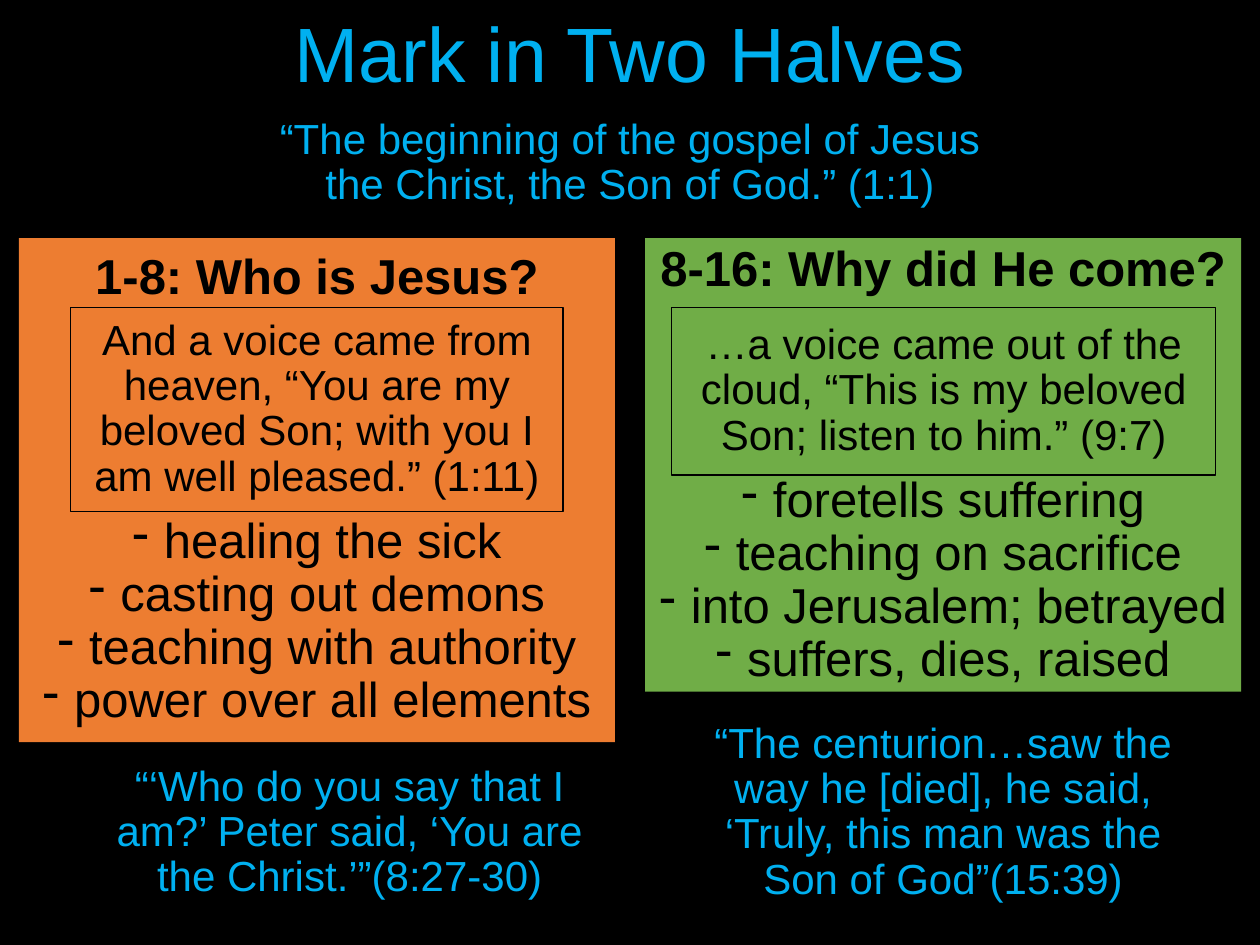
from lxml import etree
from pptx import Presentation
from pptx.dml.color import RGBColor
from pptx.enum.shapes import MSO_SHAPE
from pptx.enum.text import MSO_ANCHOR as ANCHOR, PP_ALIGN
from pptx.oxml.ns import qn
from pptx.util import Inches, Pt

BLACK = RGBColor(0x00, 0x00, 0x00)
BLUE = RGBColor(0x00, 0xB0, 0xF0)
ORANGE = RGBColor(0xED, 0x7D, 0x31)
GREEN = RGBColor(0x70, 0xAD, 0x47)

# Places are left, top, width, height in inches
TITLE = ("Mark in Two Halves", (0.69, 0.07, 8.62, 0.77))
OPENING = ("“The beginning of the gospel of Jesus the Christ, the Son of God.” (1:1)",
           (2.01, 0.9, 5.98, 0.79))
HALVES = [
    {
        "heading": "1-8: Who is Jesus?",
        "points": ["healing the sick", "casting out demons",
                   "teaching with authority", "power over all elements"],
        "panel": (0.15, 1.89, 4.73, 4), "fill": ORANGE,
        "anchor": ANCHOR.MIDDLE, "gap": 121,
        "voice": ("And a voice came from heaven, “You are my beloved Son; "
                  "with you I am well pleased.” (1:11)", (0.56, 2.44, 3.91, 1.62)),
        "answer": ("“‘Who do you say that I am?’ Peter said, ‘You are the Christ.’”(8:27-30)",
                   (0.69, 6.02, 4.17, 1.18)),
    },
    {
        "heading": "8-16: Why did He come?",
        "points": ["foretells suffering", "teaching on sacrifice",
                   "into Jerusalem; betrayed", "suffers, dies, raised"],
        "panel": (5.12, 1.89, 4.73, 3.6), "fill": GREEN,
        "anchor": ANCHOR.TOP, "gap": 101.5,
        "voice": ("…a voice came out of the cloud, “This is my beloved Son; "
                  "listen to him.” (9:7)", (5.33, 2.44, 4.32, 1.33)),
        "answer": ("“The centurion…saw the way he [died], he said, "
                   "‘Truly, this man was the Son of God”(15:39)", (5.4, 5.7, 4.17, 1.5)),
    },
]


def write(paragraph, text, size=24, color=BLUE, bold=False, bullet=None, before=0):
    paragraph.alignment = PP_ALIGN.CENTER
    paragraph.line_spacing = 0.9
    paragraph.space_before = Pt(before)
    if bullet:
        properties = paragraph._p.get_or_add_pPr()
        properties.set("marL", str(Inches(0.25)))
        properties.set("indent", str(Inches(-0.25)))
        etree.SubElement(properties, qn("a:buFontTx"))
        etree.SubElement(properties, qn("a:buChar")).set("char", bullet)
    run = paragraph.add_run()
    run.text = text
    font = run.font
    font.name, font.size, font.bold = "Arial", Pt(size), bold
    font.color.rgb = color


def prepare(shape, anchor=ANCHOR.MIDDLE):
    """Set wrapping and anchor, and return the text frame."""
    frame = shape.text_frame
    frame.word_wrap = True
    frame.vertical_anchor = anchor
    return frame


def add_quote(slide, text, place, size=24):
    box = slide.shapes.add_textbox(*map(Inches, place))
    write(prepare(box).paragraphs[0], text, size=size)


def add_rectangle(slide, place, fill=None, line=None):
    rectangle = slide.shapes.add_shape(MSO_SHAPE.RECTANGLE, *map(Inches, place))
    rectangle.shadow.inherit = False
    if fill is None:
        rectangle.fill.background()
    else:
        rectangle.fill.solid()
        rectangle.fill.fore_color.rgb = fill
    if line is None:
        rectangle.line.fill.background()
    else:
        rectangle.line.color.rgb = line
        rectangle.line.width = Pt(0.75)
    return rectangle


def add_half(slide, half):
    panel = add_rectangle(slide, half["panel"], fill=half["fill"])
    frame = prepare(panel, half["anchor"])
    write(frame.paragraphs[0], half["heading"], size=28, color=BLACK, bold=True)
    for index, point in enumerate(half["points"]):
        # The first point leaves room for the framed voice
        write(frame.add_paragraph(), point, size=28, color=BLACK, bullet="-",
              before=0 if index else half["gap"])

    voice, place = half["voice"]
    framed = add_rectangle(slide, place, line=BLACK)
    write(prepare(framed).paragraphs[0], voice, color=BLACK)
    add_quote(slide, *half["answer"])


def main():
    deck = Presentation()
    deck.slide_width, deck.slide_height = Inches(10), Inches(7.5)
    slide = deck.slides.add_slide(deck.slide_layouts[6])
    slide.background.fill.solid()
    slide.background.fill.fore_color.rgb = BLACK

    add_quote(slide, *TITLE, size=44)
    add_quote(slide, *OPENING)
    for half in HALVES:
        add_half(slide, half)
    deck.save("out.pptx")


if __name__ == "__main__":
    main()
